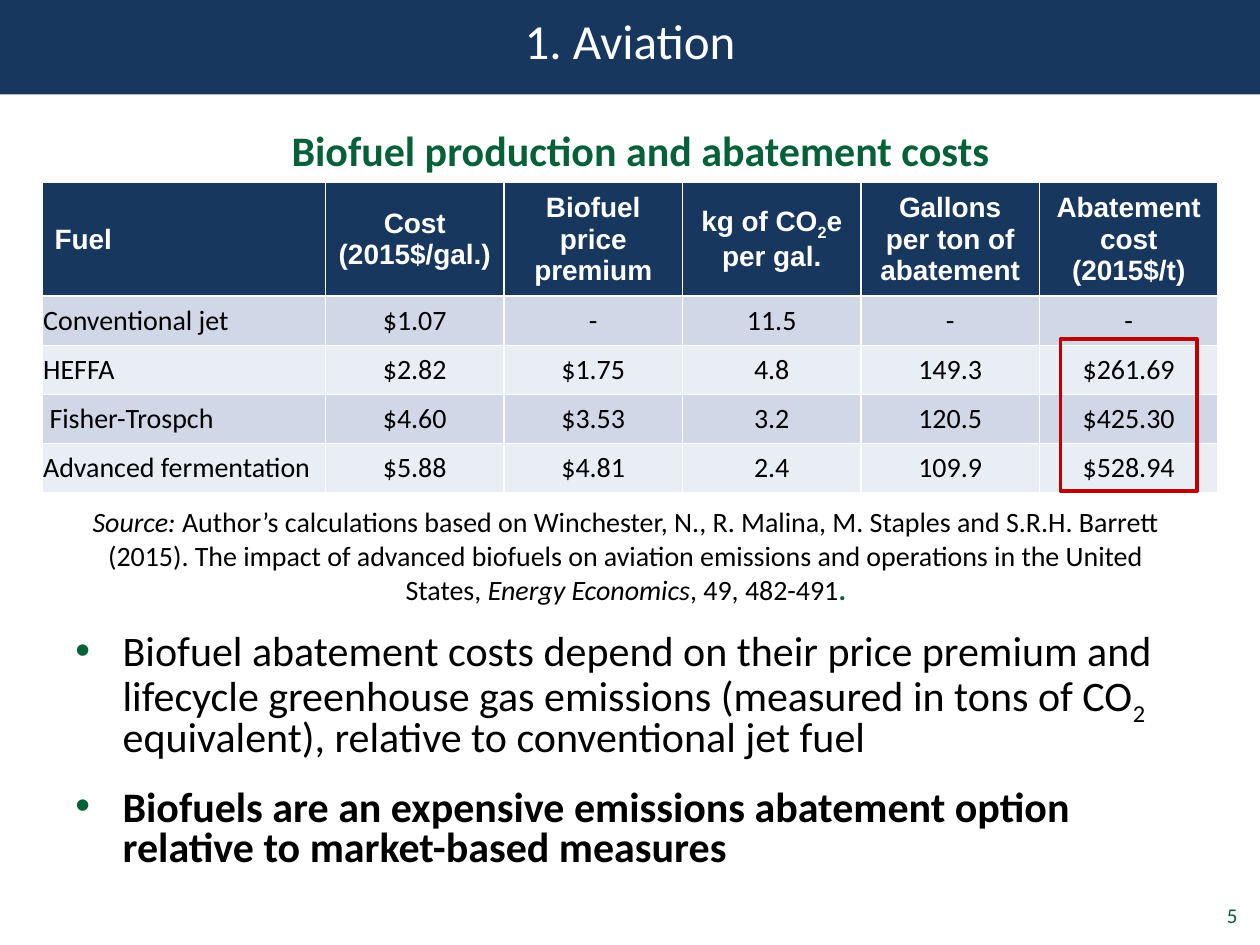
from pptx import Presentation
from pptx.util import Pt
from pptx.dml.color import RGBColor as RGB
from pptx.enum.shapes import MSO_SHAPE as Kind
from pptx.enum.text import MSO_ANCHOR as Anchor, PP_ALIGN as Align
from pptx.oxml import parse_xml
from pptx.oxml.ns import nsdecls

HEX = {"navy": "17375E", "green": "076138", "red": "C00000", "white": "FFFFFF",
       "black": "000000", "dark": "D0D8E8", "light": "E9EDF4"}
ink = {name: RGB.from_string(code) for name, code in HEX.items()}


def write(para, parts, size, color="black", bold=None, align=Align.CENTER, face="Calibri"):
    """Fill a paragraph; each part is plain text or a (text, style) pair."""
    para.alignment = align
    font = para.font
    font.name, font.size, font.bold = face, Pt(size), bold
    font.color.rgb = ink[color]
    for part in parts:
        text, style = (part, "") if isinstance(part, str) else part
        run = para.add_run()
        run.text = text
        if style == "sub":
            run.font._element.set("baseline", "-25000")
        elif style == "italic":
            run.font.italic = True
        elif style == "stop":
            run.font.bold = True
            run.font.color.rgb = ink["green"]


def add_box(left, top, width, height):
    frame = slide.shapes.add_textbox(Pt(left), Pt(top), Pt(width), Pt(height)).text_frame
    frame.word_wrap = True
    return frame


deck = Presentation()
deck.slide_width, deck.slide_height = Pt(720), Pt(540)
slide = deck.slides.add_slide(deck.slide_layouts[5])

# Title bar, with the title in front of it
bar = slide.shapes.add_shape(Kind.RECTANGLE, Pt(0), Pt(-0.7), Pt(720), Pt(54.7))
bar.shadow.inherit = False
bar.fill.solid()
bar.fill.fore_color.rgb = ink["navy"]
bar.line.fill.background()

title = slide.shapes.title
title.left, title.top, title.width, title.height = Pt(0), Pt(2.2), Pt(720), Pt(59)
title.text_frame.vertical_anchor = Anchor.TOP
write(title.text_frame.paragraphs[0], ["1. Aviation"], 28, "white")
bar.element.addnext(title.element)

# Slide number
num = add_box(546.5, 508.3, 167.8, 28.8)
num.vertical_anchor = Anchor.MIDDLE
write(num.paragraphs[0], ["5"], 12, "green", align=Align.RIGHT)

# Main points
points = [
    (["Biofuel abatement costs depend on their price premium and lifecycle greenhouse "
      "gas emissions (measured in tons of CO", ("2", "sub"),
      " equivalent), relative to conventional jet fuel"], None),
    (["Biofuels are an expensive emissions abatement option relative to "
      "market-based measures"], True),
]
body = add_box(36, 359, 648, 159)
for i, (parts, bold) in enumerate(points):
    para = body.add_paragraph() if i else body.paragraphs[0]
    write(para, parts, 24, bold=bold, align=Align.LEFT)
    para.line_spacing = 0.8
    para.space_before, para.space_after = Pt(4.8), Pt(12)
    props = para._p.get_or_add_pPr()
    props.set("marL", str(Pt(27)))
    props.set("indent", str(Pt(-27)))
    marks = [f'<a:buClr {nsdecls("a")}><a:srgbClr val="{HEX["green"]}"/></a:buClr>',
             f'<a:buFont {nsdecls("a")} typeface="Arial"/>',
             f'<a:buChar {nsdecls("a")} char="•"/>']
    for k, mark in enumerate(marks):
        props.insert(3 + k, parse_xml(mark))  # after the three spacing elements

# Cost table
heads = [["Fuel"], ["Cost (2015$/gal.)"], ["Biofuel price premium"],
         ["kg of CO", ("2", "sub"), "e per gal."],
         ["Gallons per ton of abatement"], ["Abatement cost (2015$/t)"]]
data = [
    ["Conventional jet", "$1.07", "-", "11.5", "-", "-"],
    ["HEFFA", "$2.82", "$1.75", "4.8", "149.3", "$261.69"],
    ["Fisher-Trospch", "$4.60", "$3.53", "3.2", "120.5", "$425.30"],
    ["Advanced fermentation", "$5.88", "$4.81", "2.4", "109.9", "$528.94"],
]
rows = [heads] + [[[text] for text in row] for row in data]
table = slide.shapes.add_table(5, 6, Pt(24), Pt(104.4), Pt(672), Pt(176.4)).table
for c, col in enumerate(table.columns):
    col.width = Pt(102 if c else 162)
for r, row in enumerate(rows):
    table.rows[r].height = Pt(28.1 if r else 64)
    for c, parts in enumerate(row):
        cell = table.cell(r, c)
        cell.vertical_anchor = Anchor.MIDDLE
        cell.fill.solid()
        shade = ("light", "dark")[r % 2] if r else "navy"
        cell.fill.fore_color.rgb = ink[shade]
        align = Align.CENTER if c else Align.LEFT
        para = cell.text_frame.paragraphs[0]
        if r:
            cell.margin_left = cell.margin_right = Pt(0 if c else 0.7)
            cell.margin_top = cell.margin_bottom = Pt(0)
            write(para, parts, 16, bold=False, align=align)
        else:
            write(para, parts, 16, "white", True, align, "Arial")
        props = cell._tc.get_or_add_tcPr()
        for k, side in enumerate(("lnL", "lnR", "lnT", "lnB")):
            props.insert(k, parse_xml(
                f'<a:{side} {nsdecls("a")} w="{Pt(1)}"><a:solidFill>'
                f'<a:srgbClr val="{HEX["white"]}"/></a:solidFill></a:{side}>'))
table.cell(3, 0).margin_left = Pt(4.3)

# Frame around the abatement costs
frame = slide.shapes.add_shape(Kind.RECTANGLE, Pt(606), Pt(193.7), Pt(78), Pt(87))
frame.shadow.inherit = False
frame.fill.background()
frame.line.color.rgb = ink["red"]
frame.line.width = Pt(2)

# Table heading and source
head = add_box(48, 67.7, 636, 56)
write(head.paragraphs[0], ["Biofuel production and abatement costs"], 24, "green", True)
source = add_box(39.6, 285, 636, 56)
write(source.paragraphs[0], [
    ("Source: ", "italic"),
    "Author’s calculations based on Winchester, N., R. Malina, M. Staples and S.R.H. Barrett "
    "(2015). The impact of advanced biofuels on aviation emissions and operations in the "
    "United States, ",
    ("Energy Economics", "italic"), ", 49, 482-491", (".", "stop")], 16)

deck.save("out.pptx")
